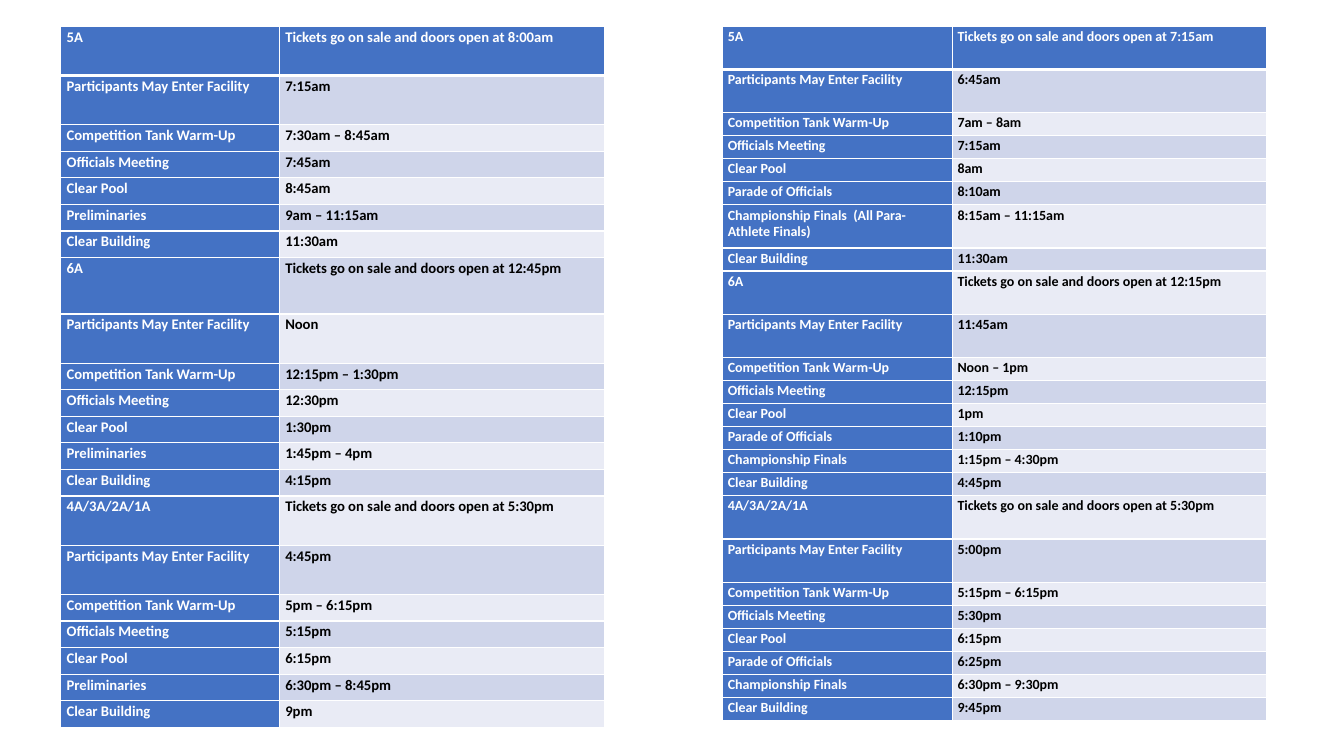
from lxml import etree
from pptx import Presentation
from pptx.dml.color import RGBColor
from pptx.oxml.ns import qn
from pptx.util import Cm, Pt

ENTER = "Participants May Enter Facility"
WARM_UP = "Competition Tank Warm-Up"
OFFICIALS = "Officials Meeting"
CLEAR_POOL = "Clear Pool"
PARADE = "Parade of Officials"
PRELIMS = "Preliminaries"
FINALS = "Championship Finals"
PARA_FINALS = "Championship Finals  (All Para-Athlete Finals)"
CLEAR_BUILDING = "Clear Building"
SMALL_CLASSES = "4A/3A/2A/1A"
TICKETS = "Tickets go on sale and doors open at "

PRELIMINARY_ROWS = [
    ("5A", TICKETS + "8:00am"),
    (ENTER, "7:15am"),
    (WARM_UP, "7:30am – 8:45am"),
    (OFFICIALS, "7:45am"),
    (CLEAR_POOL, "8:45am"),
    (PRELIMS, "9am – 11:15am"),
    (CLEAR_BUILDING, "11:30am"),
    ("6A", TICKETS + "12:45pm"),
    (ENTER, "Noon"),
    (WARM_UP, "12:15pm – 1:30pm"),
    (OFFICIALS, "12:30pm"),
    (CLEAR_POOL, "1:30pm"),
    (PRELIMS, "1:45pm – 4pm"),
    (CLEAR_BUILDING, "4:15pm"),
    (SMALL_CLASSES, TICKETS + "5:30pm"),
    (ENTER, "4:45pm"),
    (WARM_UP, "5pm – 6:15pm"),
    (OFFICIALS, "5:15pm"),
    (CLEAR_POOL, "6:15pm"),
    (PRELIMS, "6:30pm – 8:45pm"),
    (CLEAR_BUILDING, "9pm"),
]
FINALS_ROWS = [
    ("5A", TICKETS + "7:15am"),
    (ENTER, "6:45am"),
    (WARM_UP, "7am – 8am"),
    (OFFICIALS, "7:15am"),
    (CLEAR_POOL, "8am"),
    (PARADE, "8:10am"),
    (PARA_FINALS, "8:15am – 11:15am"),
    (CLEAR_BUILDING, "11:30am"),
    ("6A", TICKETS + "12:15pm"),
    (ENTER, "11:45am"),
    (WARM_UP, "Noon – 1pm"),
    (OFFICIALS, "12:15pm"),
    (CLEAR_POOL, "1pm"),
    (PARADE, "1:10pm"),
    (FINALS, "1:15pm – 4:30pm"),
    (CLEAR_BUILDING, "4:45pm"),
    (SMALL_CLASSES, TICKETS + "5:30pm"),
    (ENTER, "5:00pm"),
    (WARM_UP, "5:15pm – 6:15pm"),
    (OFFICIALS, "5:30pm"),
    (CLEAR_POOL, "6:15pm"),
    (PARADE, "6:25pm"),
    (FINALS, "6:30pm – 9:30pm"),
    (CLEAR_BUILDING, "9:45pm"),
]
# Lengths in cm; "tall" lists the labels whose rows exceed the usual height.
SCHEDULES = [
    dict(rows=PRELIMINARY_ROWS, left=1.53, widths=(5.51, 8.2), size=10.5, inset=0.15,
         height=0.67, tall={"5A": 1.24, ENTER: 1.24, "6A": 1.42, SMALL_CLASSES: 1.24}),
    dict(rows=FINALS_ROWS, left=18.21, widths=(5.79, 7.92), size=10, inset=0.13,
         height=0.58, tall=dict.fromkeys(("5A", ENTER, PARA_FINALS, "6A", SMALL_CLASSES), 1.09)),
]
TOP = 0.66
BLUE, BANDS = "4472C4", ("E9EBF5", "CFD5EA")
WHITE, BLACK = "FFFFFF", "000000"


def color(value):
    return RGBColor.from_string(value)


def set_borders(cell, widths):
    """Draw white left, right, top and bottom borders, widths in points."""
    properties = cell._tc.get_or_add_tcPr()
    for place, (side, width) in enumerate(zip("LRTB", widths)):
        line = etree.Element(qn(f"a:ln{side}"), w=str(Pt(width)))
        fill = etree.SubElement(line, qn("a:solidFill"))
        etree.SubElement(fill, qn("a:srgbClr"), val=WHITE)
        properties.insert(place, line)


def fill_cell(cell, words, row, column, schedule):
    on_blue = row == 0 or column == 0
    cell.fill.solid()
    cell.fill.fore_color.rgb = color(BLUE if on_blue else BANDS[row % 2])
    cell.margin_left = cell.margin_right = Cm(schedule["inset"])
    cell.margin_top, cell.margin_bottom = Cm(0.05), Cm(0)
    set_borders(cell, (1, 1, 3 if row == 1 else 1, 3 if row == 0 else 1))
    para = cell.text_frame.paragraphs[0]
    para.text = words
    font = para.runs[0].font
    font.name, font.size, font.bold = "Calibri", Pt(schedule["size"]), True
    font.color.rgb = color(WHITE if on_blue else BLACK)


def add_schedule(page, schedule):
    rows, widths = schedule["rows"], schedule["widths"]
    heights = [schedule["tall"].get(label, schedule["height"]) for label, _ in rows]
    table = page.shapes.add_table(
        len(rows), len(widths), Cm(schedule["left"]), Cm(TOP),
        Cm(sum(widths)), Cm(sum(heights))).table
    table.first_col = True
    for column, width in zip(table.columns, widths):
        column.width = Cm(width)
    for row, (entry, height) in enumerate(zip(rows, heights)):
        table.rows[row].height = Cm(height)
        for column, words in enumerate(entry):
            fill_cell(table.cell(row, column), words, row, column, schedule)


def main():
    deck = Presentation()
    deck.slide_width, deck.slide_height = Cm(33.87), Cm(19.05)
    page = deck.slides.add_slide(deck.slide_layouts[6])
    for schedule in SCHEDULES:
        add_schedule(page, schedule)
    deck.save("out.pptx")


if __name__ == "__main__":
    main()
